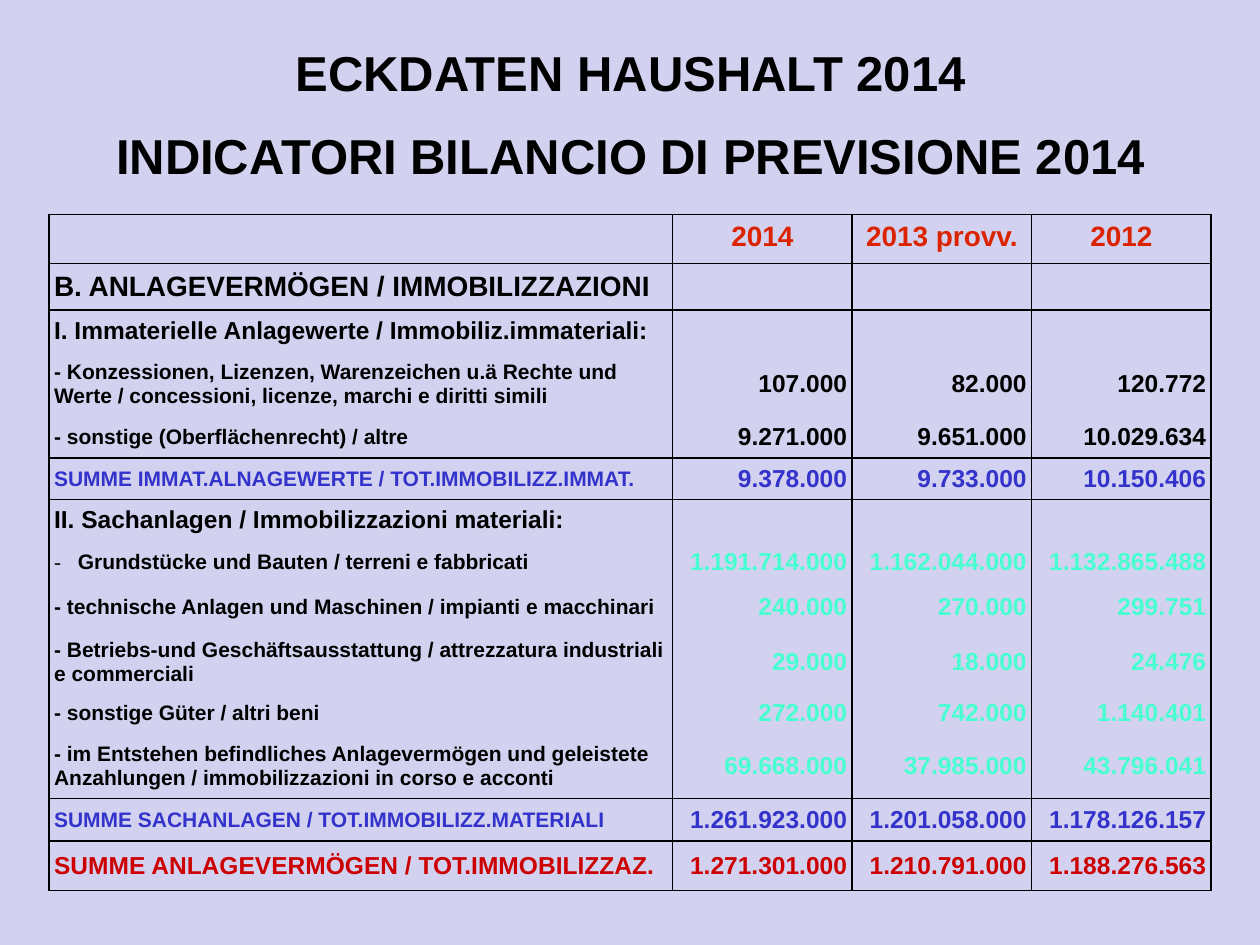
from lxml import etree
from pptx import Presentation
from pptx.dml.color import RGBColor
from pptx.enum.text import MSO_ANCHOR, PP_ALIGN
from pptx.oxml.ns import qn
from pptx.util import Cm, Pt

LEFT, CENTER, RIGHT = PP_ALIGN.LEFT, PP_ALIGN.CENTER, PP_ALIGN.RIGHT
MIDDLE = MSO_ANCHOR.MIDDLE
LILAC = RGBColor(0xD2, 0xD2, 0xF0)
BLACK = RGBColor(0, 0, 0)
ORANGE = RGBColor(0xDC, 0x23, 0x00)
BLUE = RGBColor(0x33, 0x33, 0xCC)
MINT = RGBColor(0x47, 0xFF, 0xD1)
RED = RGBColor(0xCC, 0, 0)
FONT = "Arial"

TITLES = [("ECKDATEN HAUSHALT 2014", 2), ("INDICATORI BILANCIO DI PREVISIONE 2014", 13.5)]
COLS = [12.57, 3.62, 3.62, 3.62]

# kind: label size, label colour, value size, value colour
STYLES = {
    "head": (16, BLACK, 16, ORANGE),
    "title": (16, BLACK, 14, BLACK),
    "part": (14, BLACK, 14, BLACK),
    "item": (12, BLACK, 14, BLACK),
    "asset": (12, BLACK, 14, MINT),
    "sum": (12, BLUE, 14, BLUE),
    "total": (14, RED, 14, RED),
}
INNER = ("item", "asset")
NONE = ("", "", "")
ROWS = [
    ("head", 0.99, "", "2014", "2013 provv.", "2012"),
    ("title", 0.94, "B. ANLAGEVERMÖGEN / IMMOBILIZZAZIONI", *NONE),
    ("part", 0.84, "I. Immaterielle Anlagewerte / Immobiliz.immateriali:", *NONE),
    ("item", 1.3, "- Konzessionen, Lizenzen, Warenzeichen u.ä Rechte und Werte / "
     "concessioni, licenze, marchi e diritti simili", "107.000", "82.000", "120.772"),
    ("item", 0.84, "- sonstige (Oberflächenrecht) / altre",
     "9.271.000", "9.651.000", "10.029.634"),
    ("sum", 0.84, "SUMME IMMAT.ALNAGEWERTE / TOT.IMMOBILIZZ.IMMAT.",
     "9.378.000", "9.733.000", "10.150.406"),
    ("part", 0.84, "II. Sachanlagen / Immobilizzazioni materiali:", *NONE),
    ("asset", 0.84, "Grundstücke und Bauten / terreni e fabbricati",
     "1.191.714.000", "1.162.044.000", "1.132.865.488"),
    ("asset", 0.99, "- technische Anlagen und Maschinen / impianti e macchinari",
     "240.000", "270.000", "299.751"),
    ("asset", 1.17, "- Betriebs-und Geschäftsausstattung / attrezzatura industriali "
     "e commerciali", "29.000", "18.000", "24.476"),
    ("asset", 0.84, "- sonstige Güter / altri beni", "272.000", "742.000", "1.140.401"),
    ("asset", 1.3, "- im Entstehen befindliches Anlagevermögen und geleistete "
     "Anzahlungen / immobilizzazioni in corso e acconti",
     "69.668.000", "37.985.000", "43.796.041"),
    ("sum", 0.86, "SUMME SACHANLAGEN / TOT.IMMOBILIZZ.MATERIALI",
     "1.261.923.000", "1.201.058.000", "1.178.126.157"),
    ("total", 0.99, "SUMME ANLAGEVERMÖGEN / TOT.IMMOBILIZZAZ.",
     "1.271.301.000", "1.210.791.000", "1.188.276.563"),
]
BULLET_ROW = 7


def write(para, text, size, color, align):
    """Fill a paragraph with bold text, or size it when it is empty."""
    para.text = text
    para.alignment = align
    for run in para.runs:
        font = run.font
        font.name, font.size, font.bold = FONT, Pt(size), True
        font.color.rgb = color
    if not text:
        para._p.get_or_add_endParaRPr().set("sz", str(size * 100))


def dash(para):
    """Give a paragraph a hanging dash bullet."""
    props = para._p.get_or_add_pPr()
    props.set("marL", str(Cm(0.48)))
    props.set("indent", str(-Cm(0.48)))
    tint = etree.SubElement(props, qn("a:buClr"))
    etree.SubElement(tint, qn("a:srgbClr"), val=str(BLACK))
    etree.SubElement(props, qn("a:buFont"), typeface="Times New Roman")
    etree.SubElement(props, qn("a:buChar"), char="-")


def frame(cell, top, bottom):
    """Draw the side borders of a cell and the chosen level ones."""
    props = cell._tc.get_or_add_tcPr()
    for side, shown in (("L", True), ("R", True), ("T", top), ("B", bottom)):
        line = etree.SubElement(props, qn("a:ln" + side), w=str(Pt(1)))
        if shown:
            fill = etree.SubElement(line, qn("a:solidFill"))
            etree.SubElement(fill, qn("a:srgbClr"), val=str(BLACK))
        else:
            etree.SubElement(line, qn("a:noFill"))
    cell.fill.background()


def add_title(slide, left, top, width, height):
    """Place the two centred title lines in the box."""
    box = slide.shapes.add_textbox(Cm(left), Cm(top), Cm(width), Cm(height))
    text = box.text_frame
    text.word_wrap = True
    for i, (line, gap) in enumerate(TITLES):
        para = text.add_paragraph() if i else text.paragraphs[0]
        write(para, line, 28, BLACK, CENTER)
        para.space_before = Pt(gap)


def add_budget(slide, left, top, width, height):
    """Place the budget table, scaled to the box."""
    table = slide.shapes.add_table(len(ROWS), len(COLS), Cm(left), Cm(top),
                                   Cm(width), Cm(height)).table
    table.first_row = table.horz_banding = False
    for col, size in zip(table.columns, COLS):
        col.width = Cm(size * width / sum(COLS))
    scale = height / sum(row[1] for row in ROWS)
    kinds = [row[0] for row in ROWS] + ["end"]
    for r, (kind, size, *texts) in enumerate(ROWS):
        table.rows[r].height = Cm(size * scale)
        for c, text in enumerate(texts):
            cell = table.cell(r, c)
            frame(cell, kind not in INNER, kinds[r + 1] not in INNER)
            cell.vertical_anchor = MIDDLE
            cell.margin_left = cell.margin_right = Cm(0.1)
            cell.margin_top = cell.margin_bottom = Cm(0.1)
            para = cell.text_frame.paragraphs[0]
            side = CENTER if kind == "head" else RIGHT if c else LEFT
            font = STYLES[kind][2:] if c else STYLES[kind][:2]
            write(para, text, *font, side)
            if kind == "head":
                para.line_spacing = 0.81
                para.space_before = Pt(8)
    dash(table.cell(BULLET_ROW, 0).text_frame.paragraphs[0])


def main():
    """Build the budget slide and save it."""
    deck = Presentation()
    deck.slide_width, deck.slide_height = Cm(25.4), Cm(19.05)
    slide = deck.slides.add_slide(deck.slide_layouts[6])
    fill = slide.background.fill
    fill.solid()
    fill.fore_color.rgb = LILAC
    add_title(slide, 1.98, 0.74, 21.46, 3.07)
    add_budget(slide, 0.99, 4.32, 23.43, 13.58)
    deck.save("out.pptx")


if __name__ == "__main__":
    main()
